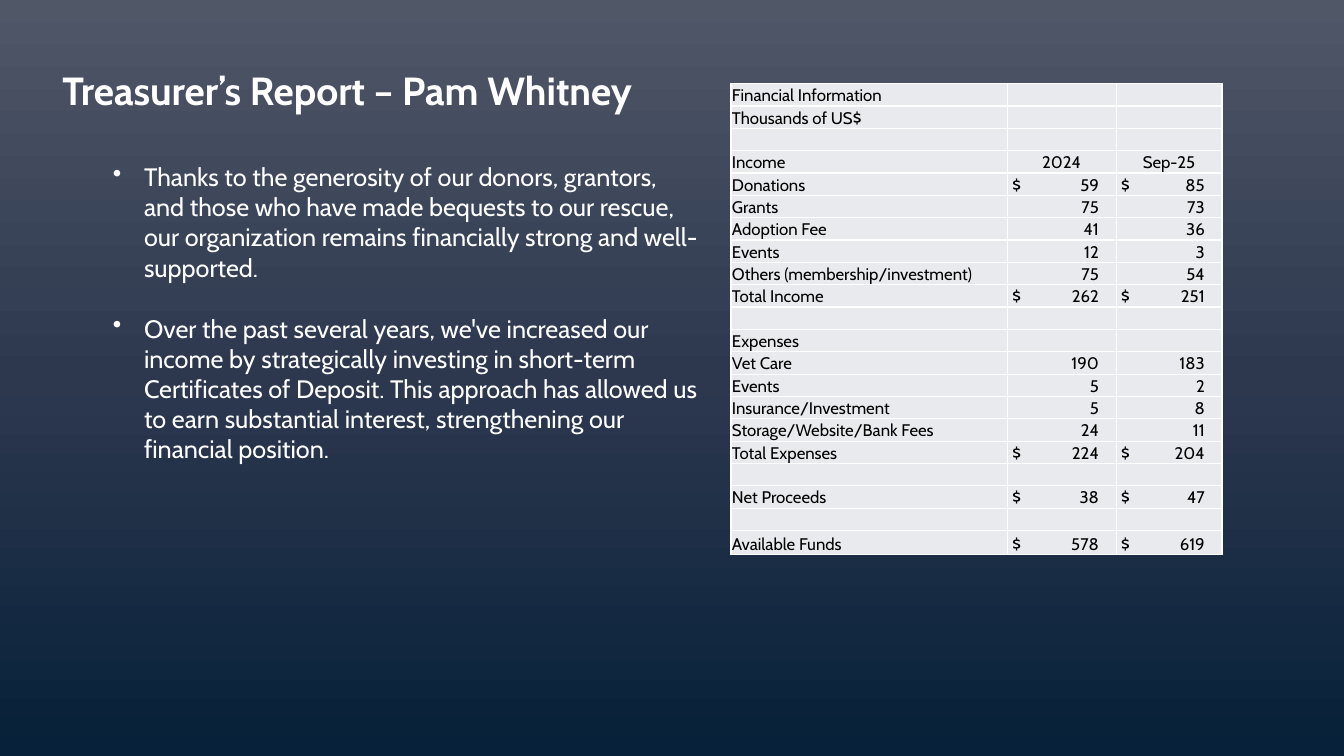
"""Build the treasurer's report slide with its financial table."""
from lxml import etree
from pptx import Presentation
from pptx.dml.color import RGBColor
from pptx.enum.text import MSO_ANCHOR, PP_ALIGN
from pptx.oxml.ns import qn
from pptx.util import Inches, Pt

BOTTOM = MSO_ANCHOR.BOTTOM
LEFT, CENTER = PP_ALIGN.LEFT, PP_ALIGN.CENTER

THEME = {
    "font": "Cabin",
    "white": "FFFFFF",
    "black": "000000",
    "cell": "E8EAED",
    "gradient": [(0, "505767"), (50, "2D384F"), (100, "062139")],
    "title": Pt(28),
    "body": Pt(18),
    "table": Pt(12),
    "border": Pt(1),
}

BULLETS = [
    ("Thanks to the generosity of our donors, grantors, and those who have made "
     "bequests to our rescue, our organization remains financially strong and "
     "well-supported.", Pt(34)),
    ("Over the past several years, we've increased our income by strategically "
     "investing in short-term Certificates of Deposit. This approach has allowed "
     "us to earn substantial interest, strengthening our financial position.", Pt(22)),
]

BLANK = ("", "", "")
ROWS = [
    ("Financial Information", "", ""),
    ("Thousands of US$", "", ""),
    BLANK,
    ("Income", "2024", "Sep-25"),
    ("Donations", "$\t59", "$\t85"),
    ("Grants", "\t75", "\t73"),
    ("Adoption Fee", "\t41", "\t36"),
    ("Events", "\t12", "\t3"),
    ("Others (membership/investment)", "\t75", "\t54"),
    ("Total Income", "$\t262", "$\t251"),
    BLANK,
    ("Expenses", "", ""),
    ("Vet Care", "\t190", "\t183"),
    ("Events", "\t5", "\t2"),
    ("Insurance/Investment", "\t5", "\t8"),
    ("Storage/Website/Bank Fees", "\t24", "\t11"),
    ("Total Expenses", "$\t224", "$\t204"),
    BLANK,
    ("Net Proceeds", "$\t38", "$\t47"),
    BLANK,
    ("Available Funds", "$\t578", "$\t619"),
]
HEADER_ROW = 3
COL_WIDTHS = [Inches(2.74), Inches(1.08), Inches(1.05)]
TAB_STOPS = [None, Inches(0.86), Inches(0.83)]
LAST_ROW = Inches(0.24)
ROW_HEIGHT = (Inches(4.68) - LAST_ROW) // (len(ROWS) - 1)


def add_text(p, text, size, color, bold=False):
    r = p.add_run()
    r.text = text
    for name, value in {"name": THEME["font"], "size": size, "bold": bold}.items():
        setattr(r.font, name, value)
    r.font.color.rgb = RGBColor.from_string(color)


def add_node(parent, tag, **attrs):
    node = etree.SubElement(parent, qn(tag))
    for name, value in attrs.items():
        node.set(name, str(value))
    return node


prs = Presentation()
prs.slide_width, prs.slide_height = Inches(13.33), Inches(7.5)
s = prs.slides.add_slide(prs.slide_layouts[6])

fill = s.background.fill
fill.gradient()
fill.gradient_angle = 270
stops = next(s.element.iter(qn("a:gsLst")))
for stop in list(stops):
    stops.remove(stop)
for percent, color in THEME["gradient"]:
    add_node(add_node(stops, "a:gs", pos=percent * 1000), "a:srgbClr", val=color)

sp = s.shapes.add_textbox(Inches(0.52), Inches(0.61), Inches(6.51), Inches(5.78))
tf = sp.text_frame
tf.word_wrap = True
add_text(tf.paragraphs[0], "Treasurer’s Report – Pam Whitney",
         THEME["title"], THEME["white"], bold=True)
for text, gap in BULLETS:
    p = tf.add_paragraph()
    p.level = 1
    p.space_before = gap
    add_text(p, text, THEME["body"], THEME["white"])
    pPr = p._p.get_or_add_pPr()
    pPr.set("marL", str(Inches(0.81)))
    pPr.set("indent", str(Inches(-0.31)))
    add_node(pPr, "a:buChar", char="•")

table = s.shapes.add_table(len(ROWS), len(COL_WIDTHS), Inches(7.25), Inches(0.83),
                           sum(COL_WIDTHS), Inches(4.68)).table
table.first_row = table.horz_banding = False
for column, width in zip(table.columns, COL_WIDTHS):
    column.width = width
for row in table.rows:
    row.height = ROW_HEIGHT
table.rows[len(ROWS) - 1].height = LAST_ROW

for i, values in enumerate(ROWS):
    for j, text in enumerate(values):
        cell = table.cell(i, j)
        amount = "\t" in text
        cell_format = {
            "vertical_anchor": BOTTOM,
            "margin_left": Inches(0.05 if amount else 0.01),
            "margin_right": Inches(0.01),
            "margin_top": Inches(0.01),
            "margin_bottom": 0,
        }
        for name, value in cell_format.items():
            setattr(cell, name, value)
        tcPr = cell._tc.get_or_add_tcPr()
        for side in ("a:lnL", "a:lnR", "a:lnT", "a:lnB"):
            line = add_node(tcPr, side, w=THEME["border"])
            add_node(add_node(line, "a:solidFill"), "a:srgbClr", val=THEME["white"])
        cell.fill.solid()
        cell.fill.fore_color.rgb = RGBColor.from_string(THEME["cell"])

        p = cell.text_frame.paragraphs[0]
        p.alignment = CENTER if i == HEADER_ROW and j else LEFT
        if amount:
            tabs = add_node(p._p.get_or_add_pPr(), "a:tabLst")
            add_node(tabs, "a:tab", pos=TAB_STOPS[j], algn="r")
        if text:
            add_text(p, text, THEME["table"], THEME["black"])
        else:
            add_node(p._p, "a:endParaRPr", sz=int(THEME["table"].pt * 100))

prs.save("out.pptx")
